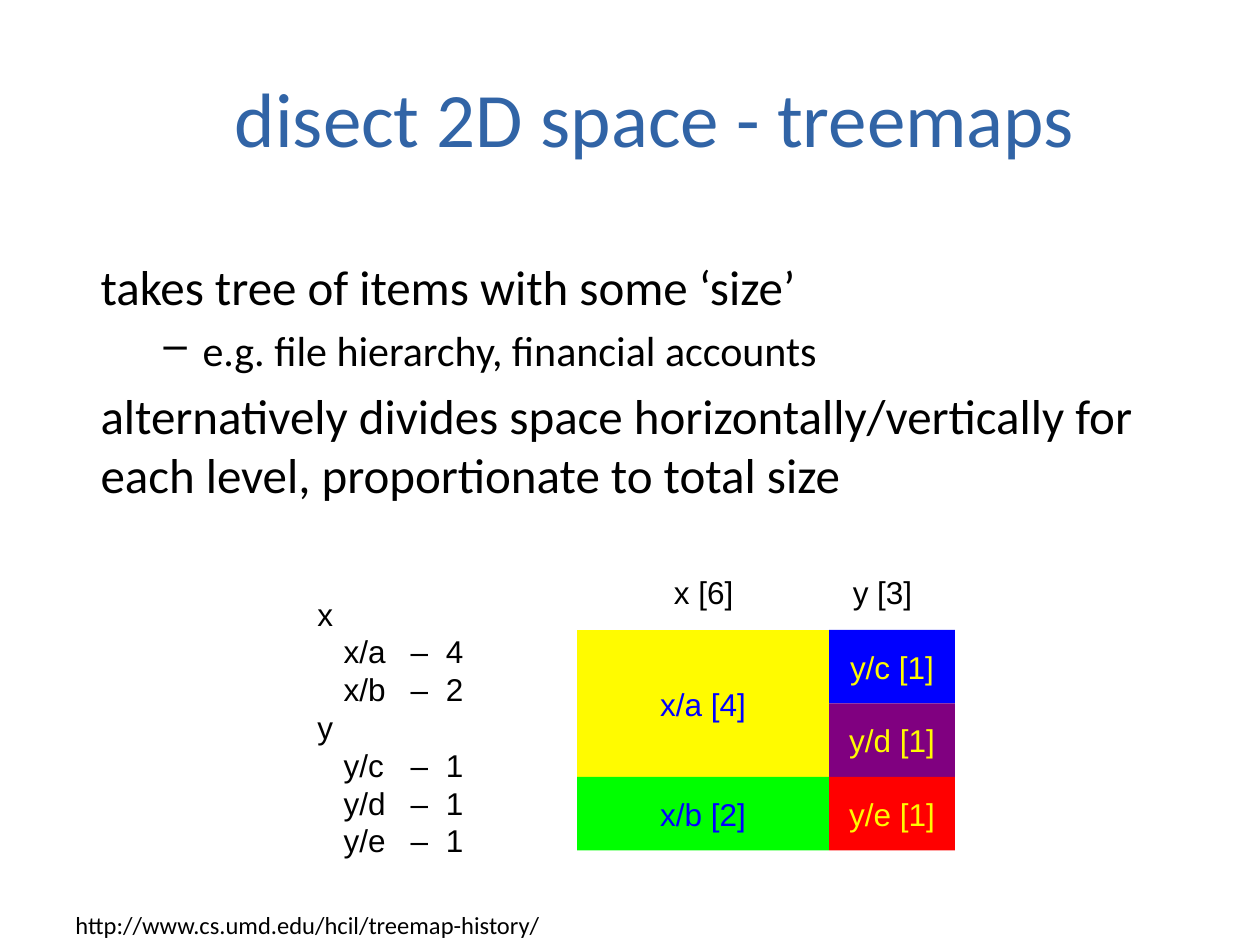
from pptx import Presentation
from pptx.dml.color import RGBColor
from pptx.enum.shapes import MSO_SHAPE as Shape
from pptx.enum.text import MSO_ANCHOR as Anchor, PP_ALIGN as Align
from pptx.oxml.xmlchemy import OxmlElement
from pptx.util import Inches, Pt

BLACK = RGBColor(0x00, 0x00, 0x00)
TITLE_BLUE = RGBColor(0x31, 0x64, 0xA6)
YELLOW = RGBColor(0xFF, 0xFB, 0x00)
GREEN = RGBColor(0x00, 0xFF, 0x00)
BLUE = RGBColor(0x00, 0x00, 0xFF)
PURPLE = RGBColor(0x80, 0x00, 0x80)
RED = RGBColor(0xFF, 0x00, 0x00)

TITLE = {"name": "Calibri", "size": Pt(44), "color": TITLE_BLUE}
BODY = {"name": "Calibri", "size": Pt(28), "color": BLACK}
DETAIL = {"name": "Calibri", "size": Pt(24), "color": BLACK}
SOURCE = {"name": "Calibri", "size": Pt(14), "color": BLACK}
LABEL = {"name": "Arial", "size": Pt(18), "color": BLACK}

TREE = [
    ("x", 0.67, [("x/a", 4, YELLOW, BLUE), ("x/b", 2, GREEN, BLUE)]),
    ("y", 0.09, [("y/c", 1, BLUE, YELLOW), ("y/d", 1, PURPLE, YELLOW), ("y/e", 1, RED, YELLOW)]),
]


def set_font(font, formats):
    """Apply a dict of format values to a font."""
    for name, value in formats.items():
        if name == "color":
            font.color.rgb = value
        else:
            setattr(font, name, value)


def add_text(slide, box, lines, formats, wrap=False):
    """Add a text box with one paragraph per line and return its frame."""
    frame = slide.shapes.add_textbox(*map(Inches, box)).text_frame
    frame.word_wrap = wrap
    for index, line in enumerate(lines):
        paragraph = frame.add_paragraph() if index else frame.paragraphs[0]
        paragraph.text = line
        set_font(paragraph.font, formats)
    return frame


def add_title(slide, box):
    """Place the centred slide title."""
    frame = add_text(slide, box, ["disect 2D space - treemaps"], TITLE, wrap=True)
    frame.vertical_anchor = Anchor.MIDDLE
    frame.paragraphs[0].alignment = Align.CENTER


def add_body(slide, box):
    """Place the explanation with its dashed detail line."""
    lines = [
        ("takes tree of items with some ‘size’", BODY, 0),
        ("e.g. file hierarchy, financial accounts", DETAIL, 5),
        ("alternatively divides space horizontally/vertically for each level, "
         "proportionate to total size", BODY, 6),
    ]
    frame = add_text(slide, box, [], BODY, wrap=True)
    for index, (text, formats, space) in enumerate(lines):
        paragraph = frame.add_paragraph() if index else frame.paragraphs[0]
        paragraph.text = text
        paragraph.space_before = Pt(space)
        if formats is DETAIL:
            properties = paragraph._p.get_or_add_pPr()
            properties.set("marL", str(Inches(0.81)))
            properties.set("indent", str(Inches(-0.31)))
            bullet = OxmlElement("a:buChar")
            bullet.set("char", "–")
            properties.append(bullet)
        set_font(paragraph.font, formats)


def add_outline(slide, box):
    """List the tree with its sizes on tab stops."""
    frame = add_text(slide, box, [], LABEL, wrap=True)
    lines = []
    for parent, _, children in TREE:
        lines.append(parent)
        lines += [f"\t{name}\t–\t{size}" for name, size, _, _ in children]
    for index, line in enumerate(lines):
        paragraph = frame.add_paragraph() if index else frame.paragraphs[0]
        paragraph.text = line
        paragraph.line_spacing = Pt(21.6)
        tabs = OxmlElement("a:tabLst")
        for position in (0.21, 0.74, 1.02):
            tab = OxmlElement("a:tab")
            tab.set("pos", str(Inches(position)))
            tab.set("algn", "l")
            tabs.append(tab)
        paragraph._p.get_or_add_pPr().append(tabs)
        set_font(paragraph.font, LABEL)


def add_cell(slide, box, text, fill, color):
    """Draw one coloured treemap cell with its label."""
    shape = slide.shapes.add_shape(Shape.RECTANGLE, *map(Inches, box))
    shape.shadow.inherit = False
    shape.fill.solid()
    shape.fill.fore_color.rgb = fill
    shape.line.fill.background()
    frame = shape.text_frame
    frame.word_wrap = False
    frame.vertical_anchor = Anchor.MIDDLE
    paragraph = frame.paragraphs[0]
    paragraph.text = text
    paragraph.alignment = Align.CENTER
    set_font(paragraph.font, {**LABEL, "color": color})


def add_treemap(slide, box):
    """Divide the box across by parent size and down by child size."""
    left, top, width, height = box
    totals = [sum(child[1] for child in children) for _, _, children in TREE]
    for (parent, label_offset, children), total in zip(TREE, totals):
        column_width = width * total / sum(totals)
        label_box = (left + label_offset, top - 0.5, 0.83, 0.5)
        add_text(slide, label_box, [f"{parent} [{total}]"], LABEL)
        cell_top = top
        for name, size, fill, color in children:
            cell_height = height * size / total
            cell = (left, cell_top, column_width, cell_height)
            add_cell(slide, cell, f"{name} [{size}]", fill, color)
            cell_top += cell_height
        left += column_width


def main():
    """Build the treemap slide and save it."""
    presentation = Presentation()
    presentation.slide_width = Inches(10)
    presentation.slide_height = Inches(7.5)
    slide = presentation.slides.add_slide(presentation.slide_layouts[6])
    add_title(slide, (0.7, 0.3, 9, 1.25))
    add_body(slide, (0.7, 1.99, 9, 2.3))
    add_outline(slide, (2.42, 4.67, 1.6, 2.2))
    add_treemap(slide, (4.58, 5, 3, 1.75))
    add_text(slide, (0.5, 7.17, 3.92, 0.34),
             ["http://www.cs.umd.edu/hcil/treemap-history/"], SOURCE)
    presentation.save("out.pptx")


if __name__ == "__main__":
    main()
